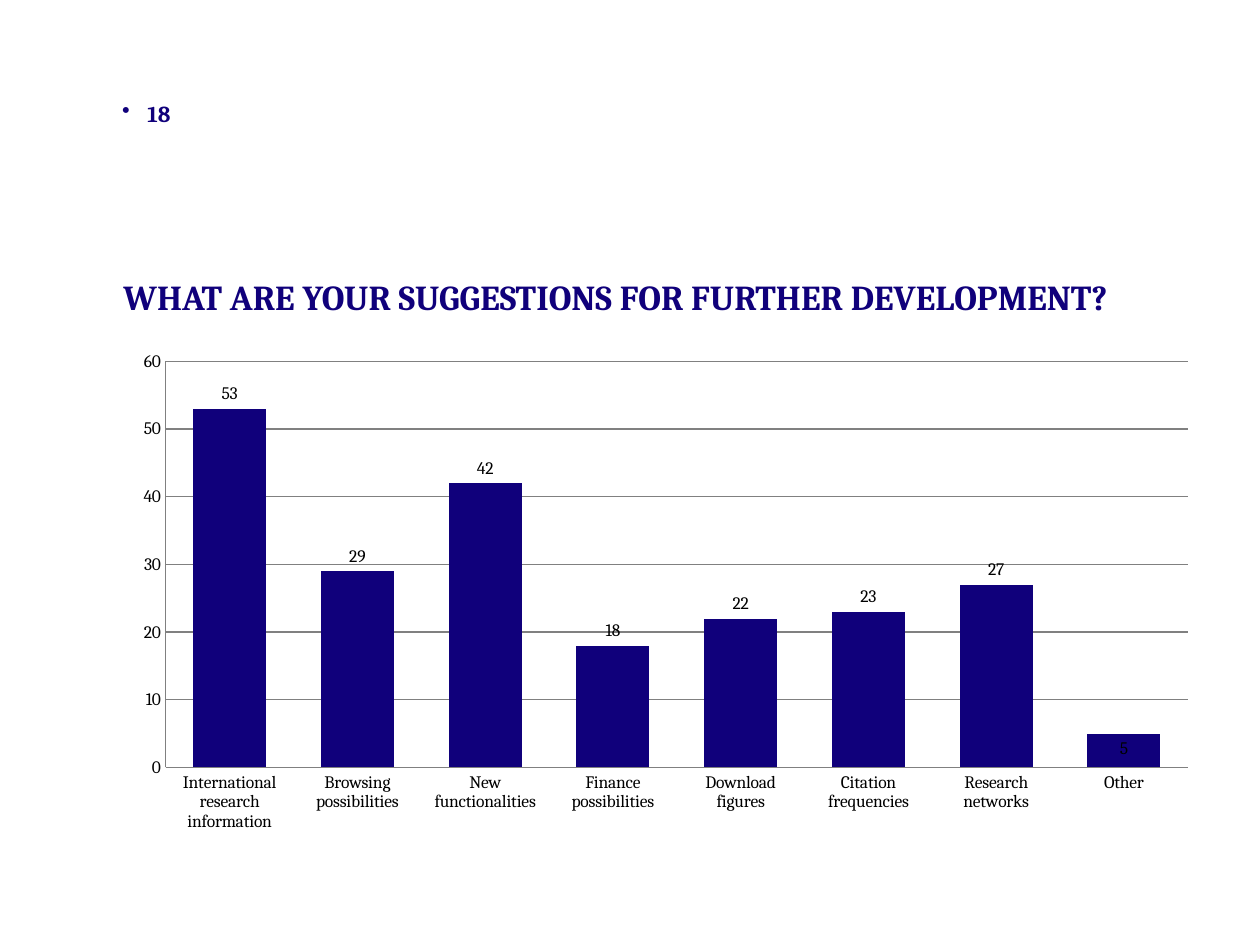
from dataclasses import dataclass

from lxml import etree
from pptx import Presentation
from pptx import util as u
from pptx.chart import data
from pptx.dml import color
from pptx.enum import chart as charts, text
from pptx.oxml import ns


@dataclass(frozen=True)
class Theme:
    font: str = "Cambria"
    navy: str = "10007B"
    black: str = "000000"
    grey: str = "808080"
    title_size: int = 20
    bullet_size: int = 13
    chart_size: int = 10


def rgb(value):
    return color.RGBColor.from_string(value)


def set_font(font, name, size, colour, bold=False):
    font.name = name
    font.size = u.Pt(size)
    font.bold = bold
    font.color.rgb = rgb(colour)


def write_text(frame, words, *, name, size, colour, bold=False,
               line_spacing=None, bullet_indent=None):
    paragraph = frame.paragraphs[0]
    paragraph.alignment = text.PP_ALIGN.LEFT
    if line_spacing:
        paragraph.line_spacing = u.Pt(line_spacing)
    if bullet_indent:
        properties = paragraph._p.get_or_add_pPr()
        properties.set("marL", str(bullet_indent))
        properties.set("indent", str(-bullet_indent))
        bullet = etree.SubElement(properties, ns.qn("a:buChar"))
        bullet.set("char", "•")
    run = paragraph.add_run()
    run.text = words
    set_font(run.font, name, size, colour, bold)


def set_plot_area(chart, **fractions):
    plot_area = chart._chartSpace.chart.plotArea
    for old in plot_area.findall(ns.qn("c:layout")):
        plot_area.remove(old)
    layout = etree.Element(ns.qn("c:layout"))
    manual = etree.SubElement(layout, ns.qn("c:manualLayout"))
    settings = {"layoutTarget": "inner", "xMode": "edge", "yMode": "edge", **fractions}
    for tag, value in settings.items():
        etree.SubElement(manual, ns.qn(f"c:{tag}")).set("val", str(value))
    plot_area.insert(0, layout)


class SlideBuilder:
    def __init__(self, slide, theme):
        self.slide = slide
        self.theme = theme

    def text_box(self, words, left, top, width, height, *, size, wrap=True,
                 anchor=text.MSO_ANCHOR.TOP, **options):
        box = self.slide.shapes.add_textbox(
            u.Inches(left), u.Inches(top), u.Inches(width), u.Inches(height))
        frame = box.text_frame
        frame.word_wrap = wrap
        frame.vertical_anchor = anchor
        frame.margin_left = frame.margin_right = 0
        frame.margin_top = frame.margin_bottom = 0
        write_text(frame, words, name=self.theme.font, size=size,
                   colour=self.theme.navy, bold=True, **options)

    def column_chart(self, votes, left, top, width, height):
        chart_data = data.CategoryChartData(number_format="0")
        chart_data.categories = list(votes)
        chart_data.add_series("Series 1", list(votes.values()))
        chart = self.slide.shapes.add_chart(
            charts.XL_CHART_TYPE.COLUMN_CLUSTERED, u.Inches(left), u.Inches(top),
            u.Inches(width), u.Inches(height), chart_data).chart
        theme = self.theme
        set_font(chart.font, theme.font, theme.chart_size, theme.black)
        chart.has_title = False
        chart.has_legend = False
        set_plot_area(chart, x=0.04, y=0.04, w=0.94, h=0.81)
        self.style_axes(chart)
        self.style_columns(chart.plots[0])

    def style_axes(self, chart):
        value_axis = chart.value_axis
        value_axis.minimum_scale = 0
        value_axis.maximum_scale = 60
        value_axis.major_unit = 10
        value_axis.has_major_gridlines = True
        value_axis.tick_labels.number_format = "0"
        value_axis.tick_labels.number_format_is_linked = False
        for axis in (chart.category_axis, value_axis):
            axis.major_tick_mark = charts.XL_TICK_MARK.NONE
            axis.minor_tick_mark = charts.XL_TICK_MARK.NONE
        for line in (chart.category_axis.format.line, value_axis.format.line,
                     value_axis.major_gridlines.format.line):
            line.color.rgb = rgb(self.theme.grey)
            line.width = u.Pt(0.75)

    def style_columns(self, plot):
        plot.gap_width = 75
        plot.overlap = 40
        plot.vary_by_categories = False
        series = plot.series[0]
        series.format.fill.solid()
        series.format.fill.fore_color.rgb = rgb(self.theme.navy)
        labels = series.data_labels
        labels.show_value = True
        labels.number_format = "0"
        labels.number_format_is_linked = False
        labels.position = charts.XL_LABEL_POSITION.INSIDE_END
        set_font(labels.font, self.theme.font, self.theme.chart_size, self.theme.black)
        for index in range(len(series.values) - 1):
            label = series.points[index].data_label
            label.position = charts.XL_LABEL_POSITION.OUTSIDE_END


def main():
    presentation = Presentation()
    presentation.slide_width = u.Inches(10)
    presentation.slide_height = u.Inches(7.5)
    theme = Theme()
    slide = presentation.slides.add_slide(presentation.slide_layouts[6])
    builder = SlideBuilder(slide, theme)

    builder.text_box("WHAT ARE YOUR SUGGESTIONS FOR FURTHER DEVELOPMENT?",
                     0.98, 2.02, 8.54, 0.56, size=theme.title_size, wrap=False,
                     anchor=text.MSO_ANCHOR.MIDDLE, line_spacing=32)
    builder.text_box("18", 0.97, 0.79, 0.54, 0.52, size=theme.bullet_size,
                     bullet_indent=u.Inches(0.2))
    suggestions = {
        "International research information": 53,
        "Browsing possibilities": 29,
        "New functionalities": 42,
        "Finance possibilities": 18,
        "Download figures": 22,
        "Citation frequencies": 23,
        "Research networks": 27,
        "Other": 5,
    }
    builder.column_chart(suggestions, 0.97, 2.71, 8.63, 3.98)
    presentation.save("out.pptx")


if __name__ == "__main__":
    main()
